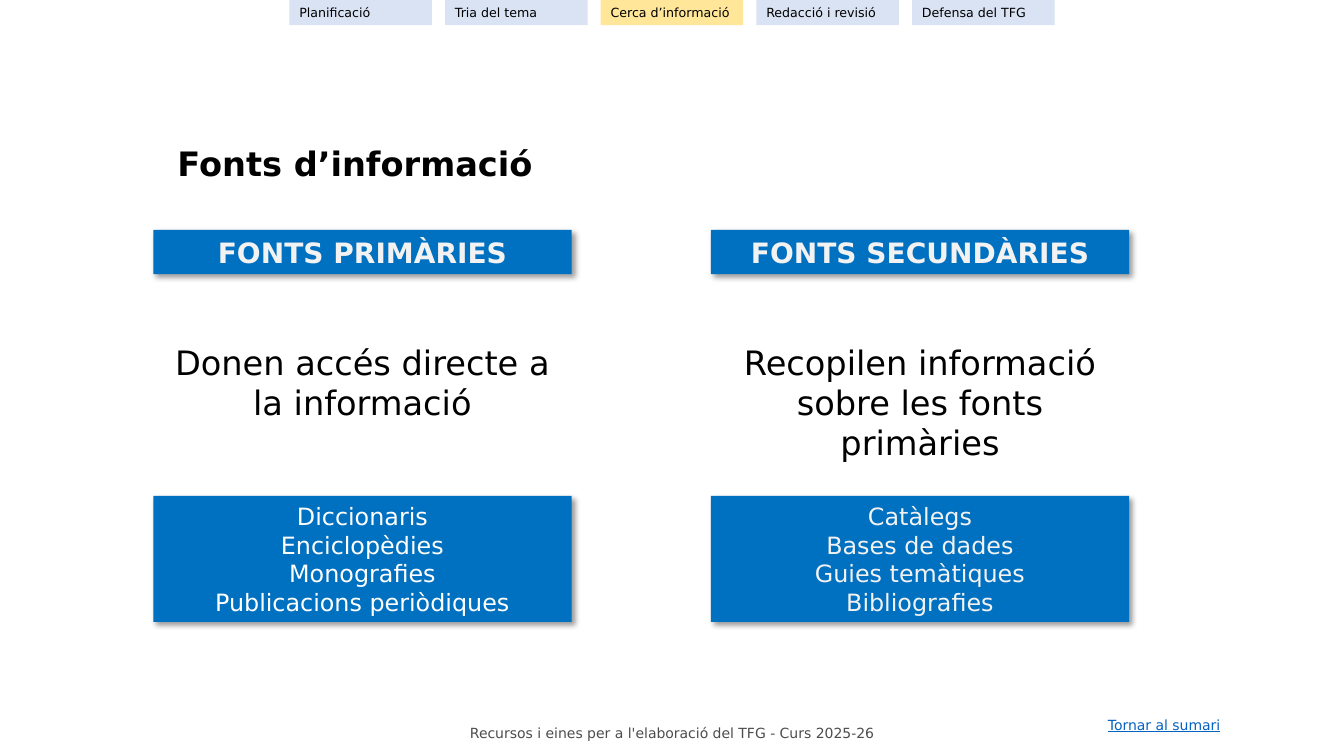
from lxml import etree
from pptx import Presentation
from pptx.dml.color import RGBColor
from pptx.enum import shapes, text
from pptx.oxml import ns
from pptx.util import Inches, Pt

FONT = "DejaVu Sans"
COLORS = {
    "black": "000000",
    "white": "FFFFFF",
    "off_white": "F2F2F2",
    "blue": "0070C0",
    "tab": "DAE3F3",
    "current_tab": "FFE699",
    "footer": "4D4D4D",
    "link": "0563C1",
}
LEFT, CENTER = text.PP_ALIGN.LEFT, text.PP_ALIGN.CENTER
TOP, MIDDLE = text.MSO_ANCHOR.TOP, text.MSO_ANCHOR.MIDDLE

STAGES = ["Planificació", "Tria del tema", "Cerca d’informació",
          "Redacció i revisió", "Defensa del TFG"]
CURRENT_STAGE = "Cerca d’informació"
SOURCES = [
    ("FONTS PRIMÀRIES", "Donen accés directe a la informació", 0.91,
     ["Diccionaris", "Enciclopèdies", "Monografies", "Publicacions periòdiques"],
     "white"),
    ("FONTS SECUNDÀRIES", "Recopilen informació sobre les fonts primàries", 1.31,
     ["Catàlegs", "Bases de dades", "Guies temàtiques", "Bibliografies"],
     "off_white"),
]


def rgb(name):
    return RGBColor.from_string(COLORS[name])


def write(shape, lines, size, color, align=CENTER, anchor=TOP, bold=False,
          underline=False, wrap=True):
    frame = shape.text_frame
    frame.text = "\n".join(lines)
    frame.auto_size = text.MSO_AUTO_SIZE.NONE
    frame.word_wrap = wrap
    frame.vertical_anchor = anchor
    for paragraph in frame.paragraphs:
        paragraph.alignment = align
        paragraph.line_spacing = 1.0
        font = paragraph.font
        font.name, font.size = FONT, Pt(size)
        font.bold, font.underline = bold, underline
        font.color.rgb = rgb(color)


def add_label(slide, box, lines, size, color, **style):
    label = slide.shapes.add_textbox(*map(Inches, box))
    write(label, lines, size, color, **style)


def add_panel(slide, box, fill):
    """Add a plain filled rectangle without outline or shadow."""
    panel = slide.shapes.add_shape(shapes.MSO_SHAPE.RECTANGLE, *map(Inches, box))
    panel.shadow.inherit = False
    panel.fill.solid()
    panel.fill.fore_color.rgb = rgb(fill)
    panel.line.fill.background()
    return panel


def cast_shadow(panel):
    """Give the panel a soft shadow towards the lower right."""
    effects = panel._element.spPr.find(ns.qn("a:effectLst"))
    shadow = etree.SubElement(
        effects, ns.qn("a:outerShdw"), blurRad=str(Pt(4)), dist=str(Pt(3)),
        dir=str(45 * 60000), algn="tl", rotWithShape="0")
    tint = etree.SubElement(shadow, ns.qn("a:srgbClr"), val=COLORS["black"])
    etree.SubElement(tint, ns.qn("a:alpha"), val="40000")


def add_stage_tabs(slide, left, top, width, height):
    gap = 0.13
    tab_width = (width - gap * (len(STAGES) - 1)) / len(STAGES)
    for i, stage in enumerate(STAGES):
        fill = "current_tab" if stage == CURRENT_STAGE else "tab"
        tab = add_panel(
            slide, (left + i * (tab_width + gap), top, tab_width, height), fill)
        write(tab, [stage], 9, "black", align=LEFT, anchor=MIDDLE)


def add_title(slide, left, top, width, height):
    title = slide.shapes.title
    title.left, title.top = Inches(left), Inches(top)
    title.width, title.height = Inches(width), Inches(height)
    write(title, ["Fonts d’informació"], 24, "black", align=LEFT, bold=True)


def add_source_column(slide, left, top, width, source):
    heading, description, description_height, examples, examples_color = source
    banner = add_panel(slide, (left, top, width, 0.44), "blue")
    write(banner, [heading], 20, "off_white", anchor=MIDDLE, bold=True)
    add_label(slide, (left, top + 1.06, width, description_height),
              [description], 24, "black")
    example_list = add_panel(slide, (left, top + 2.64, width, 1.25), "blue")
    write(example_list, examples, 17, examples_color, anchor=MIDDLE)
    for panel in (banner, example_list):
        cast_shadow(panel)


def add_footer(slide, left, top, width, height):
    add_label(slide, (left, top + 0.08, 5.83, height),
              ["Recursos i eines per a l'elaboració del TFG - Curs 2025-26"],
              10, "footer", anchor=MIDDLE)
    link_width = 1.36
    add_label(slide, (left + width - link_width, top, link_width, height),
              ["Tornar al sumari"], 10, "link", align=LEFT, underline=True,
              wrap=False)


def main():
    deck = Presentation()
    deck.slide_width, deck.slide_height = Inches(13.33), Inches(7.5)
    slide = deck.slides.add_slide(deck.slide_layouts[5])
    add_footer(slide, 3.75, 7.06, 8.5, 0.27)
    add_title(slide, 1.66, 1.37, 8.35, 0.5)
    for i, source in enumerate(SOURCES):
        add_source_column(slide, 1.52 + i * 5.53, 2.28, 4.15, source)
    add_stage_tabs(slide, 2.87, 0, 7.59, 0.25)
    deck.save("out.pptx")


if __name__ == "__main__":
    main()
